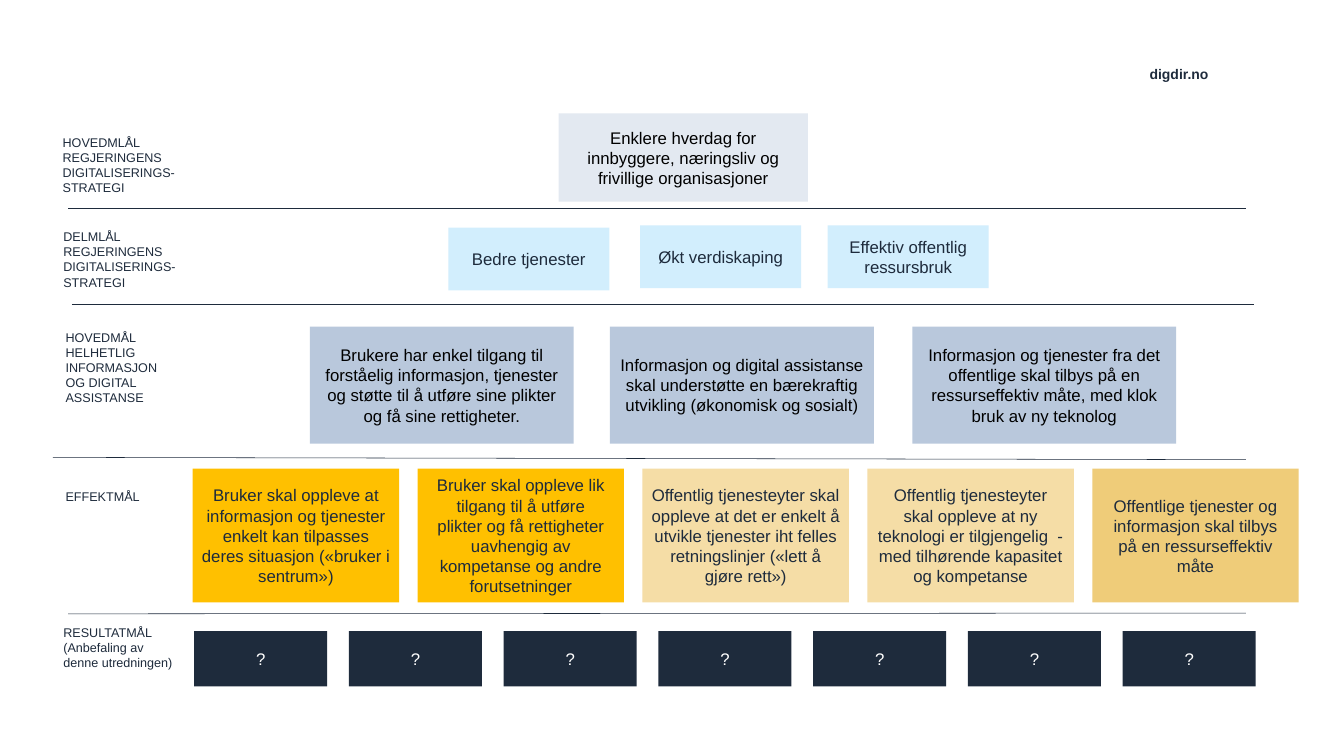
import pptx
import pptx.util
import pptx.dml.color
import pptx.enum.shapes
import pptx.enum.text
import pptx.oxml.ns
import lxml.etree

Pt = pptx.util.Pt
COLORS = {
    "navy": "1E2B3C", "black": "000000", "white": "FFFFFF", "pale": "E3E9F1",
    "sky": "D2EEFD", "steel": "B9C8DC", "gold": "FFC000", "sand": "F5DDA6",
    "amber": "EFCC79",
}
FONT = "Arial"

# Labels: text, left, top, width, height
LABELS = [
    ("HOVEDMLÅL REGJERINGENS DIGITALISERINGS-STRATEGI", 52.6, 124.6, 131.8, 65.5),
    ("DELMLÅL REGJERINGENS DIGITALISERINGS-STRATEGI", 53.3, 214.6, 136, 65.5),
    ("HOVEDMÅL\nHELHETLIG INFORMASJON OG DIGITAL ASSISTANSE", 55.4, 310.3, 116.6, 80),
    ("EFFEKTMÅL", 55.4, 462.2, 95, 21.6),
    ("RESULTATMÅL\n(Anbefaling av denne utredningen)", 53.3, 591.8, 126.7, 51),
]

# Goals: text, left, top
MAIN = [("Enklere hverdag for innbyggere, næringsliv og frivillige organisasjoner", 532, 108)]
PARTS = [
    ("Bedre tjenester", 427, 216.7),
    ("Økt verdiskaping", 609.8, 214.6),
    ("Effektiv offentlig ressursbruk", 788.4, 214.6),
]
AIMS = [
    ("Brukere har enkel tilgang til forståelig informasjon, tjenester og støtte "
     "til å utføre sine plikter og få sine rettigheter.", 295.2, 311),
    ("Informasjon og digital assistanse skal understøtte en bærekraftig utvikling "
     "(økonomisk og sosialt)", 581, 311),
    ("Informasjon og tjenester fra det offentlige skal tilbys på en ressurseffektiv "
     "måte, med klok bruk av ny teknolog", 869, 311),
]

# Effects: text, fill, side inset
EFFECTS = [
    ("Bruker skal oppleve at informasjon og tjenester enkelt kan tilpasses deres "
     "situasjon («bruker i sentrum»)", "gold", 7.2),
    ("Bruker skal oppleve lik tilgang til å utføre\n"
     "plikter og få rettigheter uavhengig av kompetanse og andre forutsetninger", "gold", 9.6),
    ("Offentlig tjenesteyter skal oppleve at det er enkelt å utvikle tjenester iht "
     "felles retningslinjer («lett å gjøre rett»)", "sand", 7.2),
    ("Offentlig tjenesteyter skal oppleve at ny teknologi er tilgjengelig  - med "
     "tilhørende kapasitet og kompetanse", "sand", 9.6),
    ("Offentlige tjenester og informasjon skal tilbys på en ressurseffektiv måte",
     "amber", 9.6),
]
RESULTS = ["?"] * 7

# Dividers: start x, start y, end x, end y
RULES = [
    (64.8, 198, 1186.6, 198),
    (68.4, 289.4, 1194.5, 289.4),
    (50.4, 435.6, 1186.6, 437.8),
    (64.8, 584.6, 1186.6, 583.9),
]

deck = pptx.Presentation()
deck.slide_width, deck.slide_height = Pt(1280.16), Pt(720)
slide = deck.slides.add_slide(deck.slide_layouts[6])


def tint(name):
    return pptx.dml.color.RGBColor.from_string(COLORS[name])


def write(frame, text, size, color, align, bold=False):
    frame.word_wrap = True
    frame.text = text
    for para in frame.paragraphs:
        para.alignment = align
        for run in para.runs:
            run.font.name, run.font.size, run.font.bold = FONT, Pt(size), bold
            run.font.color.rgb = tint(color)


def add_label(text, left, top, width, height, size=12, bold=False):
    box = slide.shapes.add_textbox(Pt(left), Pt(top), Pt(width), Pt(height))
    write(box.text_frame, text, size, "navy", pptx.enum.text.PP_ALIGN.LEFT, bold)


def add_goal(text, left, top, width, height, fill, color, inset=7.2):
    box = slide.shapes.add_shape(pptx.enum.shapes.MSO_SHAPE.RECTANGLE,
                                 Pt(left), Pt(top), Pt(width), Pt(height))
    box.shadow.inherit = False
    box.fill.solid()
    box.fill.fore_color.rgb = tint(fill)
    box.line.fill.background()
    frame = box.text_frame
    frame.vertical_anchor = pptx.enum.text.MSO_ANCHOR.MIDDLE
    frame.margin_left = frame.margin_right = Pt(inset)
    write(frame, text, 16, color, pptx.enum.text.PP_ALIGN.CENTER)


def add_rule(x1, y1, x2, y2):
    rule = slide.shapes.add_connector(pptx.enum.shapes.MSO_CONNECTOR.STRAIGHT,
                                      Pt(x1), Pt(y1), Pt(x2), Pt(y2))
    rule.line.color.rgb = tint("navy")
    rule.line.width = Pt(0.5)
    lxml.etree.SubElement(rule._element.spPr, pptx.oxml.ns.qn("a:effectLst"))


# Header and row labels
add_label("digdir.no", 1087.9, 59, 81.4, 23.8, 13.3, True)
for label in LABELS:
    add_label(*label)

# Goal rows with their own places
for goals, width, height, fill, color in [
    (MAIN, 237.6, 84.2, "pale", "black"),
    (PARTS, 153.4, 59.8, "sky", "navy"),
    (AIMS, 251.3, 111.6, "steel", "black"),
]:
    for text, left, top in goals:
        add_goal(text, left, top, width, height, fill, color)

# Evenly spaced rows
for i, (text, fill, inset) in enumerate(EFFECTS):
    add_goal(text, 183.6 + i * 214.2, 446.4, 196.6, 127.4, fill, "navy", inset)
for i, text in enumerate(RESULTS):
    add_goal(text, 185 + i * 147.4, 601.2, 126.7, 52.6, "navy", "white")

# Dividers between rows
for rule in RULES:
    add_rule(*rule)

deck.save("out.pptx")
